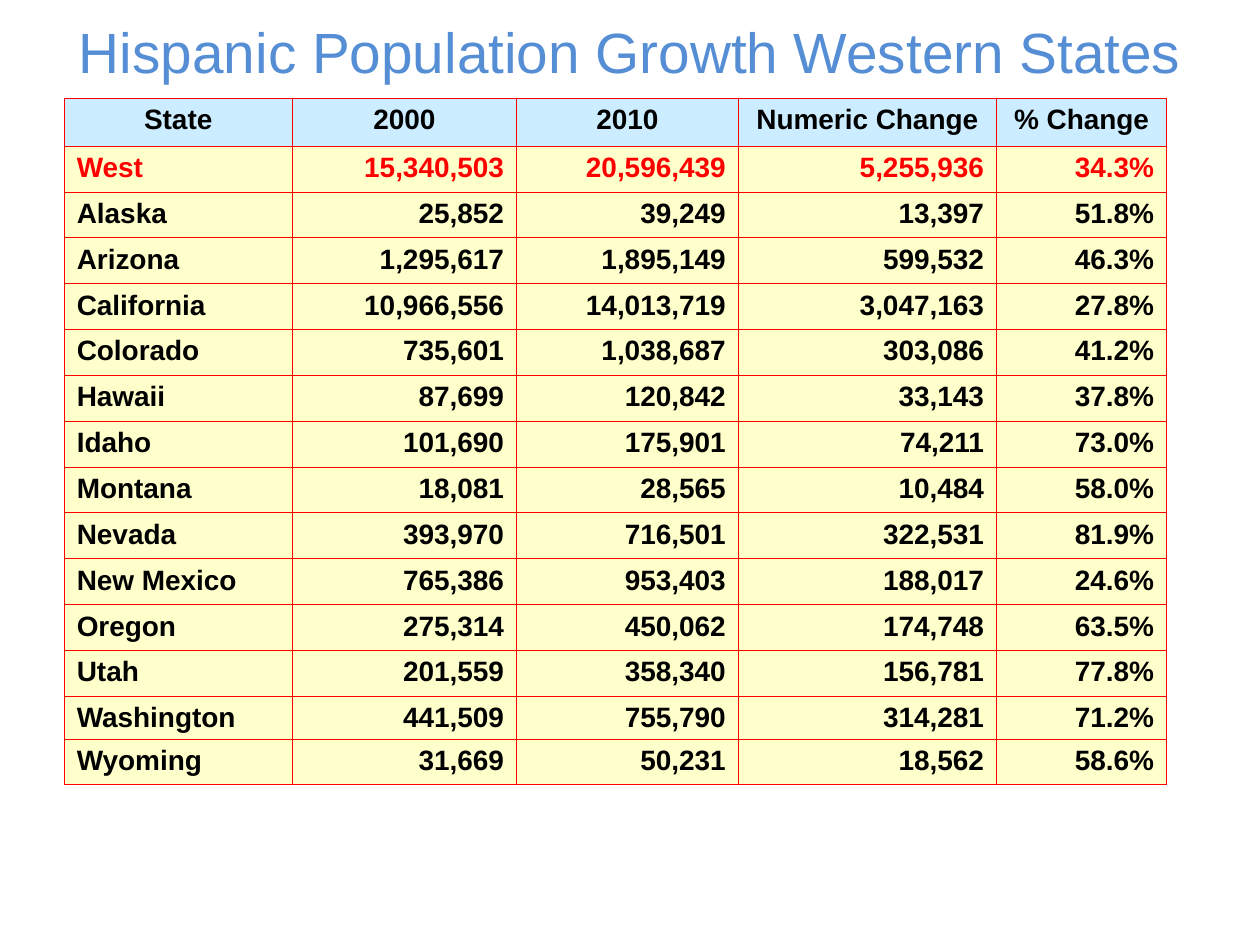
"""Build a slide with a table of Hispanic population growth in western states."""
from lxml.etree import SubElement
from pptx import Presentation
from pptx.dml.color import RGBColor
from pptx.enum.text import MSO_ANCHOR, PP_ALIGN
from pptx.oxml.ns import qn
from pptx.util import Inches, Pt

TITLE = "Hispanic Population Growth Western States"
HEAD = ("State", "2000", "2010", "Numeric Change", "% Change")
STATES = [
    ("West", "15,340,503", "20,596,439", "5,255,936", "34.3%"),
    ("Alaska", "25,852", "39,249", "13,397", "51.8%"),
    ("Arizona", "1,295,617", "1,895,149", "599,532", "46.3%"),
    ("California", "10,966,556", "14,013,719", "3,047,163", "27.8%"),
    ("Colorado", "735,601", "1,038,687", "303,086", "41.2%"),
    ("Hawaii", "87,699", "120,842", "33,143", "37.8%"),
    ("Idaho", "101,690", "175,901", "74,211", "73.0%"),
    ("Montana", "18,081", "28,565", "10,484", "58.0%"),
    ("Nevada", "393,970", "716,501", "322,531", "81.9%"),
    ("New Mexico", "765,386", "953,403", "188,017", "24.6%"),
    ("Oregon", "275,314", "450,062", "174,748", "63.5%"),
    ("Utah", "201,559", "358,340", "156,781", "77.8%"),
    ("Washington", "441,509", "755,790", "314,281", "71.2%"),
    ("Wyoming", "31,669", "50,231", "18,562", "58.6%"),
]
ROWS = [HEAD] + STATES
WIDTHS = (1.81, 1.78, 1.76, 2.05, 1.35)
LEFT, TOP, HEIGHT = 0.51, 0.78, 5.45
HEAD_H, SHORT_H = 0.38, 0.34
SHORT = "Washington"
ROW_H = (HEIGHT - HEAD_H - SHORT_H) / (len(STATES) - 1)

BLUE = RGBColor(0x55, 0x8E, 0xD5)
SKY = RGBColor(0xCC, 0xEC, 0xFF)
CREAM = RGBColor(0xFF, 0xFF, 0xCC)
RED = RGBColor(0xFF, 0x00, 0x00)
BLACK = RGBColor(0x00, 0x00, 0x00)


def write(para, text, size, color, align, bold=False):
    para.alignment = align
    run = para.add_run()
    run.text = text
    font = run.font
    font.name, font.size, font.bold = "Arial", Pt(size), bold
    font.color.rgb = color


def border(cell):
    props = cell._tc.get_or_add_tcPr()
    for spot, side in enumerate(("a:lnL", "a:lnR", "a:lnT", "a:lnB")):
        line = props.makeelement(qn(side), {"w": str(Pt(0.5))})
        fill = SubElement(line, qn("a:solidFill"))
        SubElement(fill, qn("a:srgbClr"), val=str(RED))
        props.insert(spot, line)


def add_title(slide):
    title = slide.shapes.title
    title.left, title.top = Inches(0), Inches(0.23)
    title.width, title.height = Inches(10), Inches(0.34)
    frame = title.text_frame
    frame.word_wrap = True
    frame.vertical_anchor = MSO_ANCHOR.MIDDLE
    write(frame.paragraphs[0], TITLE, 32.4, BLUE, PP_ALIGN.CENTER)


def add_grid(slide):
    frame = slide.shapes.add_table(
        len(ROWS), len(HEAD), Inches(LEFT), Inches(TOP),
        Inches(sum(WIDTHS)), Inches(HEIGHT))
    table = frame.table
    table.horz_banding = False
    for col, width in zip(table.columns, WIDTHS):
        col.width = Inches(width)
    for r, row in enumerate(ROWS):
        high = {HEAD[0]: HEAD_H, SHORT: SHORT_H}.get(row[0], ROW_H)
        table.rows[r].height = Inches(high)
        for c, text in enumerate(row):
            cell = table.cell(r, c)
            cell.margin_bottom = Inches(0.03)
            cell.fill.solid()
            cell.fill.fore_color.rgb = CREAM if r else SKY
            border(cell)
            if r == 0:
                align = PP_ALIGN.CENTER
            else:
                align = PP_ALIGN.RIGHT if c else PP_ALIGN.LEFT
            color = RED if row[0] == "West" else BLACK
            write(cell.text_frame.paragraphs[0], text, 16, color, align, True)


def main():
    deck = Presentation()
    deck.slide_width, deck.slide_height = Inches(10), Inches(7.5)
    slide = deck.slides.add_slide(deck.slide_layouts[5])
    add_title(slide)
    add_grid(slide)
    deck.save("out.pptx")


if __name__ == "__main__":
    main()
